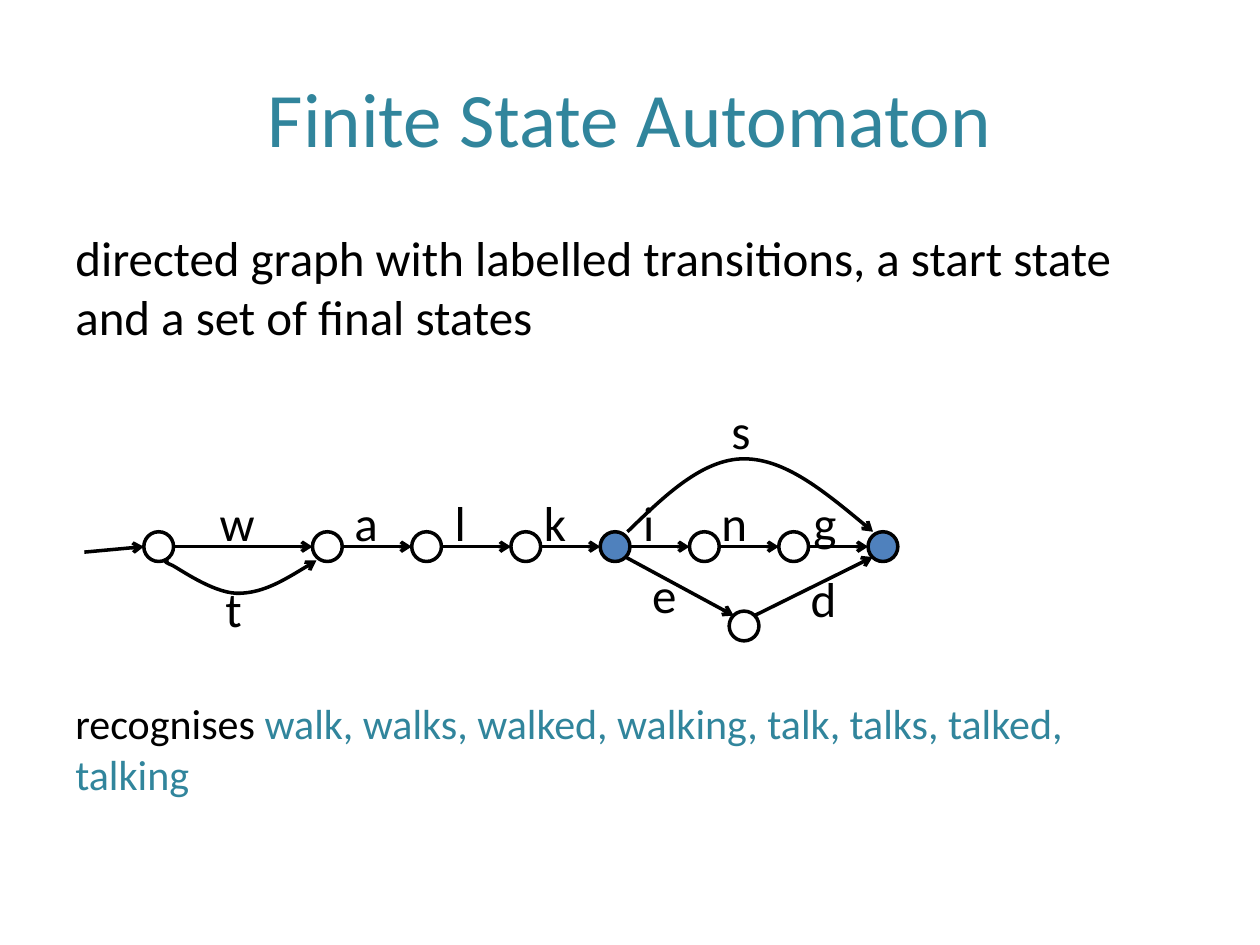
from lxml.etree import SubElement
from pptx import Presentation
from pptx.dml.color import RGBColor
from pptx.enum.shapes import MSO_CONNECTOR, MSO_SHAPE
from pptx.enum.text import MSO_ANCHOR, PP_ALIGN
from pptx.oxml.ns import qn
from pptx.util import Cm, Pt

TEAL = RGBColor(0x31, 0x85, 0x9C)
BLUE = RGBColor(0x4F, 0x81, 0xBD)
BLACK = RGBColor(0, 0, 0)

RADIUS = 0.3
CORNER = 0.21  # offset of the 45 degree point on a state's rim
ROW_Y = 11.02
LOWER_X, LOWER_Y = 15.0, 12.62
STATE_XS = [3.2, 6.6, 8.6, 10.6, 12.4, 14.2, 16.0, 17.8]
FINAL_XS = {12.4, 17.8}


class AutomatonPage:
    """Holds the slide and its style; lengths are in centimetres."""

    font = "Calibri"
    line_width = Pt(2)

    def __init__(self, page):
        self.page = page

    def add_spans(self, para, spans, size):
        for text, color in spans:
            span = para.add_run()
            span.text = text
            span.font.name = self.font
            span.font.size = Pt(size)
            span.font.color.rgb = color

    def title(self, text):
        box = self.page.shapes.title
        box.left, box.top, box.width, box.height = Cm(1.27), Cm(0.76), Cm(22.86), Cm(3.18)
        box.text_frame.vertical_anchor = MSO_ANCHOR.MIDDLE
        para = box.text_frame.paragraphs[0]
        para.alignment = PP_ALIGN.CENTER
        self.add_spans(para, [(text, TEAL)], 44)

    def text(self, left, top, width, height, spans, size=28, align=PP_ALIGN.LEFT):
        box = self.page.shapes.add_textbox(Cm(left), Cm(top), Cm(width), Cm(height))
        box.text_frame.word_wrap = True
        para = box.text_frame.paragraphs[0]
        para.alignment = align
        self.add_spans(para, spans, size)

    def label(self, letter, center_x, top):
        self.text(center_x - 0.6, top, 1.2, 1.45, [(letter, BLACK)], align=PP_ALIGN.CENTER)

    def state(self, x, y, final=False):
        circle = self.page.shapes.add_shape(
            MSO_SHAPE.OVAL, Cm(x - RADIUS), Cm(y - RADIUS), Cm(2 * RADIUS), Cm(2 * RADIUS))
        circle.shadow.inherit = False
        if final:
            circle.fill.solid()
            circle.fill.fore_color.rgb = BLUE
        else:
            circle.fill.background()
        self.outline(circle)

    def outline(self, shape, arrow=False):
        shape.line.color.rgb = BLACK
        shape.line.width = self.line_width
        if arrow:
            properties = shape._element.spPr.find(qn("a:ln"))
            SubElement(properties, qn("a:tailEnd"), type="arrow")

    def arrow(self, start, end):
        line = self.page.shapes.add_connector(
            MSO_CONNECTOR.STRAIGHT, *(Cm(value) for value in (*start, *end)))
        self.outline(line, arrow=True)
        SubElement(line._element.spPr, qn("a:effectLst"))

    def curve(self, points):
        """Draw cubic segments: a start point, then three points per segment."""
        start, *rest = [(Cm(x), Cm(y)) for x, y in points]
        builder = self.page.shapes.build_freeform(*start)
        builder.add_line_segments(rest, close=False)
        shape = builder.convert_to_shape()
        shape.shadow.inherit = False
        shape.fill.background()
        self.outline(shape, arrow=True)
        # Turn each three straight steps into one Bezier segment
        steps = list(shape._element.iter(qn("a:lnTo")))
        contour = steps[0].getparent()
        for first in range(0, len(steps), 3):
            bezier = SubElement(contour, qn("a:cubicBezTo"))
            for step in steps[first:first + 3]:
                bezier.append(step[0])
                contour.remove(step)


def main():
    deck = Presentation()
    deck.slide_width, deck.slide_height = Cm(25.4), Cm(19.05)
    page = AutomatonPage(deck.slides.add_slide(deck.slide_layouts[5]))

    # Title and definition
    page.title("Finite State Automaton")
    page.text(1.27, 4.47, 22.86, 2.7, [
        ("directed graph with labelled transitions, a start state and a set of final states",
         BLACK)])

    # States
    for x in STATE_XS:
        page.state(x, ROW_Y, x in FINAL_XS)
    page.state(LOWER_X, LOWER_Y)

    # Straight transitions
    page.arrow((1.7, 11.13), (STATE_XS[0] - RADIUS, ROW_Y))
    for x, following in zip(STATE_XS, STATE_XS[1:]):
        page.arrow((x + RADIUS, ROW_Y), (following - RADIUS, ROW_Y))
    page.arrow((12.4 + CORNER, ROW_Y + CORNER), (LOWER_X - CORNER, LOWER_Y - CORNER))
    page.arrow((LOWER_X + CORNER, LOWER_Y - CORNER), (17.8 - CORNER, ROW_Y + CORNER))

    # Curved transitions: s above the row, t below it
    page.curve([(12.65, 10.72), (13.41, 9.98), (14.17, 9.25), (15, 9.25),
                (15.82, 9.25), (16.71, 9.98), (17.6, 10.72)])
    page.curve([(3.4, 11.28), (3.33, 11.28), (3.23, 11.3), (3.48, 11.4),
                (3.71, 11.53), (4.37, 11.99), (4.85, 11.96),
                (5.33, 11.94), (5.84, 11.63), (6.38, 11.3)])

    # Transition labels
    for letter, x in zip("walking", [4.78, 7.38, 9.28, 11.19, 13.08, 14.8, 16.63]):
        page.label(letter, x, 9.8)
    for letter, x, top in [("s", 14.94, 7.94), ("e", 13.39, 11.25),
                           ("d", 16.6, 11.33), ("t", 4.71, 11.53)]:
        page.label(letter, x, top)

    # Recognised words
    page.text(1.27, 13.94, 22.86, 2.3, [
        ("recognises ", BLACK),
        ("walk, walks, walked, walking, talk, talks, talked, talking", TEAL)], size=24)

    deck.save("out.pptx")


if __name__ == "__main__":
    main()
